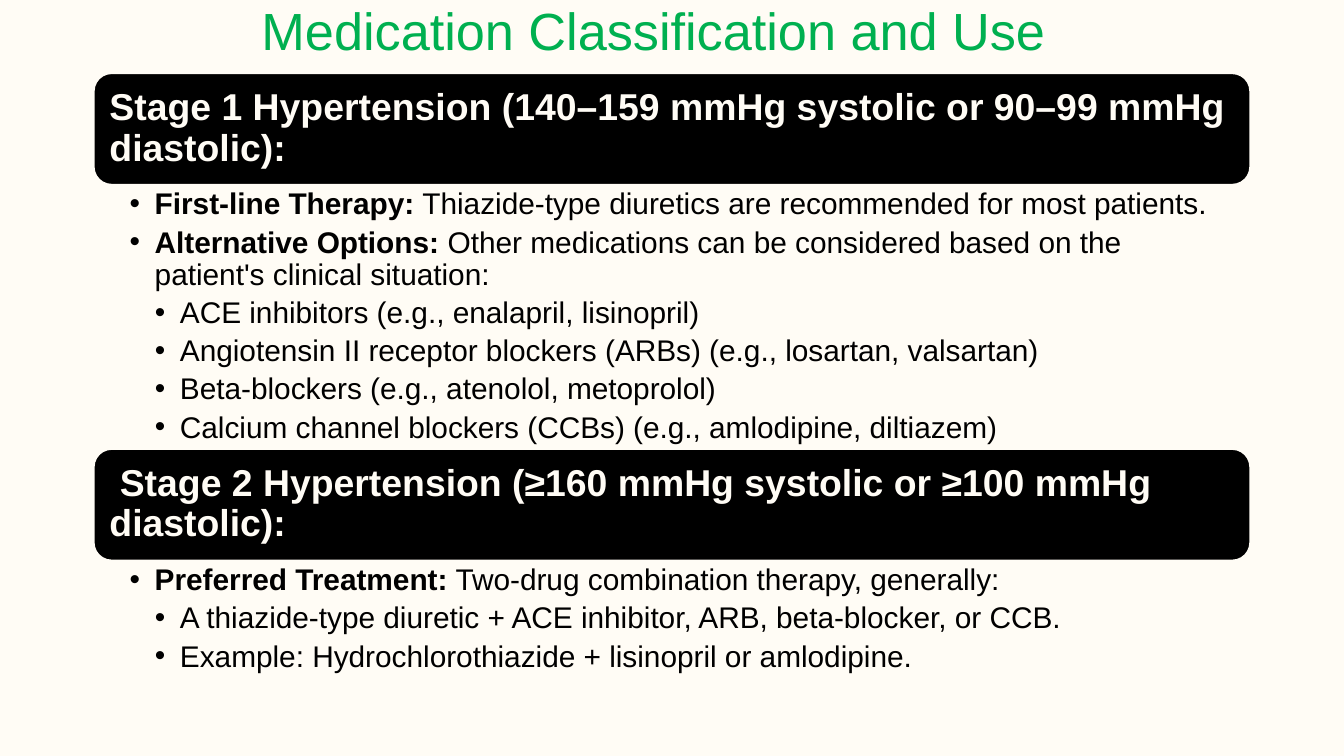
from dataclasses import dataclass

from lxml import etree
from pptx import Presentation
from pptx import util as u
from pptx.dml.color import RGBColor
from pptx.enum import shapes, text
from pptx.oxml.ns import qn


@dataclass
class Theme:
    font: str = "Arial"
    cream: RGBColor = RGBColor(0xFF, 0xFC, 0xF5)
    black: RGBColor = RGBColor(0, 0, 0)
    green: RGBColor = RGBColor(0x00, 0xB0, 0x50)
    title_size: int = 28
    heading_size: int = 20
    body_size: int = 16


theme = Theme()
LEFT, WIDTH, HEADING_HEIGHT = 49.7, 620.6, 60.8
INDENT = 13.5

STAGES = [
    (38.7, 140.4, "Stage 1 Hypertension (140–159 mmHg systolic or 90–99 mmHg diastolic):", [
        (1, "First-line Therapy:", " Thiazide-type diuretics are recommended for most patients."),
        (1, "Alternative Options:",
         " Other medications can be considered based on the patient's clinical situation:"),
        (2, "", "ACE inhibitors (e.g., enalapril, lisinopril)"),
        (2, "", "Angiotensin II receptor blockers (ARBs) (e.g., losartan, valsartan)"),
        (2, "", "Beta-blockers (e.g., atenolol, metoprolol)"),
        (2, "", "Calcium channel blockers (CCBs) (e.g., amlodipine, diltiazem)"),
    ]),
    (240, 61.9, " Stage 2 Hypertension (≥160 mmHg systolic or ≥100 mmHg diastolic):", [
        (1, "Preferred Treatment:", " Two-drug combination therapy, generally:"),
        (2, "", "A thiazide-type diuretic + ACE inhibitor, ARB, beta-blocker, or CCB."),
        (2, "", "Example: Hydrochlorothiazide + lisinopril or amlodipine."),
    ]),
]


def set_frame(frame, anchor, left, top, right, bottom):
    frame.word_wrap = True
    frame.auto_size = text.MSO_AUTO_SIZE.NONE
    frame.vertical_anchor = anchor
    frame.margin_left, frame.margin_top = u.Pt(left), u.Pt(top)
    frame.margin_right, frame.margin_bottom = u.Pt(right), u.Pt(bottom)


def set_font(run, size, color, bold=False):
    run.font.name = theme.font
    run.font.size = u.Pt(size)
    run.font.color.rgb = color
    run.font.bold = bold


presentation = Presentation()
presentation.slide_width, presentation.slide_height = u.Pt(720), u.Pt(405)
slide = presentation.slides.add_slide(presentation.slide_layouts[5])
slide.background.fill.solid()
slide.background.fill.fore_color.rgb = theme.cream

title = slide.shapes.title
title.left, title.top, title.width, title.height = u.Pt(39.6), u.Pt(-7.9), u.Pt(620.6), u.Pt(48.2)
title.text_frame.text = "Medication Classification and Use"
set_frame(title.text_frame, text.MSO_ANCHOR.TOP, 7.2, 7.2, 7.2, 7.2)
title_paragraph = title.text_frame.paragraphs[0]
title_paragraph.alignment = text.PP_ALIGN.CENTER
set_font(title_paragraph.runs[0], theme.title_size, theme.green)

for top, body_height, heading_text, items in STAGES:
    heading = slide.shapes.add_shape(
        shapes.MSO_SHAPE.ROUNDED_RECTANGLE,
        u.Pt(LEFT), u.Pt(top), u.Pt(WIDTH), u.Pt(HEADING_HEIGHT))
    heading.shadow.inherit = False
    heading.fill.solid()
    heading.fill.fore_color.rgb = theme.black
    heading.line.color.rgb = theme.cream
    heading.line.width = u.Pt(2)
    heading.text_frame.text = heading_text
    set_frame(heading.text_frame, text.MSO_ANCHOR.MIDDLE, 6, 6, 6, 6)
    paragraph = heading.text_frame.paragraphs[0]
    paragraph.alignment = text.PP_ALIGN.LEFT
    paragraph.line_spacing = 0.9
    set_font(paragraph.runs[0], theme.heading_size, theme.cream, True)

    body = slide.shapes.add_textbox(
        u.Pt(LEFT), u.Pt(top + HEADING_HEIGHT), u.Pt(WIDTH), u.Pt(body_height))
    set_frame(body.text_frame, text.MSO_ANCHOR.TOP, 19.7, 1.8, 11.5, 1.8)
    for index, (level, label, detail) in enumerate(items):
        paragraph = body.text_frame.paragraphs[0] if index == 0 else body.text_frame.add_paragraph()
        paragraph.level = level
        paragraph.line_spacing = 0.9
        paragraph.space_after = u.Pt(3.2)
        properties = paragraph._p.get_or_add_pPr()
        properties.set("marL", str(u.Pt(INDENT * level)))
        properties.set("indent", str(-u.Pt(INDENT)))
        bullet_color = etree.SubElement(properties, qn("a:buClr"))
        etree.SubElement(bullet_color, qn("a:srgbClr")).set("val", str(theme.black))
        etree.SubElement(properties, qn("a:buFont")).set("typeface", theme.font)
        etree.SubElement(properties, qn("a:buChar")).set("char", "•")
        for words, bold in ((label, True), (detail, False)):
            if words:
                run = paragraph.add_run()
                run.text = words
                set_font(run, theme.body_size, theme.black, bold)

presentation.save("out.pptx")
